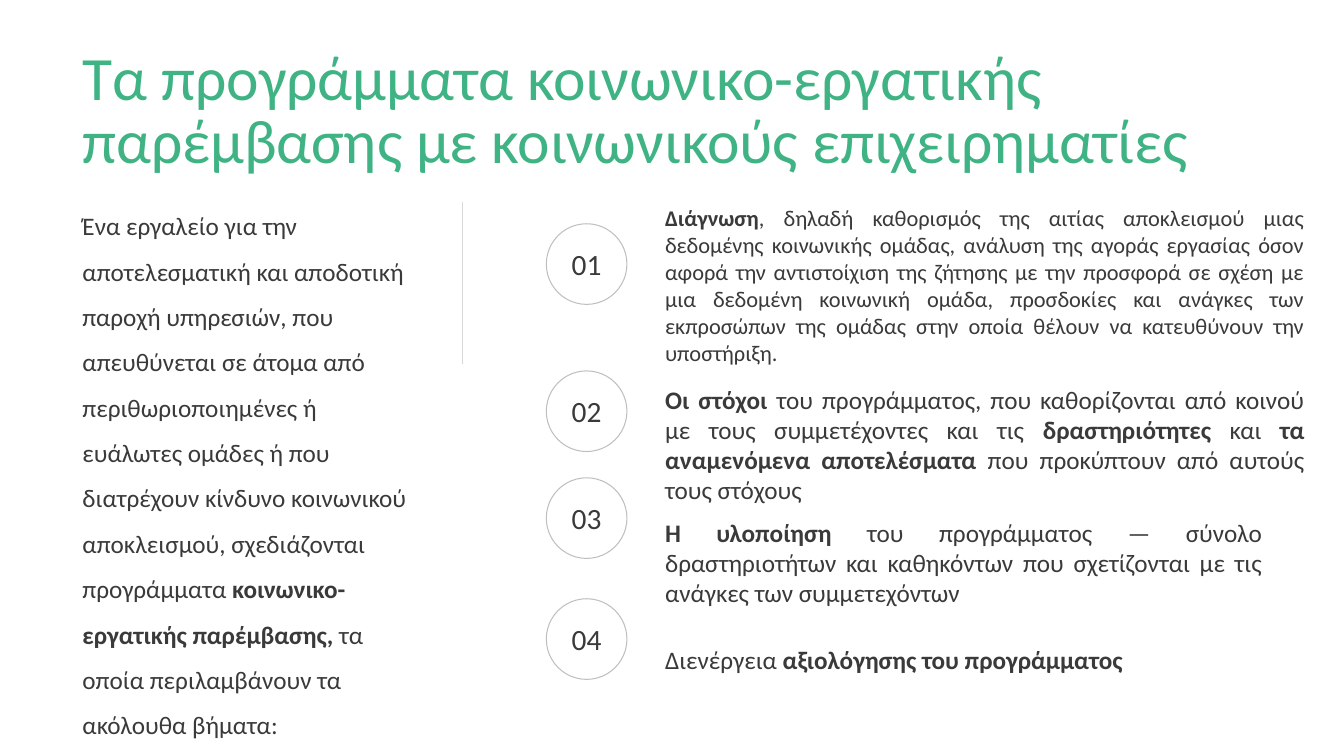
from lxml.etree import SubElement
from pptx import Presentation
from pptx.dml.color import RGBColor
from pptx.enum.shapes import MSO_CONNECTOR as Connector, MSO_SHAPE as Shape
from pptx.enum.text import MSO_ANCHOR as Anchor, MSO_AUTO_SIZE as AutoSize, PP_ALIGN as Align
from pptx.oxml.ns import qn
from pptx.util import Pt

GREEN = RGBColor(0x40, 0xB3, 0x85)
INK = RGBColor(0x3A, 0x3A, 0x3A)
RULE_GREY = RGBColor(0xD8, 0xD8, 0xD8)
RING_GREY = RGBColor(0xBF, 0xBF, 0xBF)

HEADING = "Τα προγράμματα κοινωνικο-εργατικής παρέμβασης με κοινωνικούς επιχειρηματίες"
INTRO = (
    "Ένα εργαλείο για την αποτελεσματική και αποδοτική παροχή υπηρεσιών, που απευθύνεται "
    "σε άτομα από περιθωριοποιημένες ή ευάλωτες ομάδες ή που διατρέχουν κίνδυνο κοινωνικού "
    "αποκλεισμού, σχεδιάζονται προγράμματα **κοινωνικο-εργατικής παρέμβασης,** τα οποία "
    "περιλαμβάνουν τα ακόλουθα βήματα:"
)
DIAGNOSIS = (
    "**Διάγνωση**, δηλαδή καθορισμός της αιτίας αποκλεισμού μιας δεδομένης κοινωνικής ομάδας, "
    "ανάλυση της αγοράς εργασίας όσον αφορά την αντιστοίχιση της ζήτησης με την προσφορά σε "
    "σχέση με μια δεδομένη κοινωνική ομάδα, προσδοκίες και ανάγκες των εκπροσώπων της ομάδας "
    "στην οποία θέλουν να κατευθύνουν την υποστήριξη."
)
GOALS = (
    "**Οι στόχοι **του προγράμματος, που καθορίζονται από κοινού με τους συμμετέχοντες και τις "
    "**δραστηριότητες **και **τα αναμενόμενα αποτελέσματα **που προκύπτουν από αυτούς τους στόχους"
)
DELIVERY = (
    "**Η υλοποίηση **του προγράμματος — σύνολο δραστηριοτήτων και καθηκόντων "
    "που σχετίζονται με τις ανάγκες των συμμετεχόντων"
)
EVALUATION = "Διενέργεια **αξιολόγησης του προγράμματος**"

STEPS = [
    (159.84, 142.56, 470.88, DIAGNOSIS, 16, Align.JUSTIFY, 1),
    (264.96, 270.72, 470.88, GOALS, 18, Align.JUSTIFY, 1),
    (341.28, 365.76, 440.64, DELIVERY, 18, Align.JUSTIFY, 1),
    (427.68, 445.68, 440.64, EVALUATION, 18, Align.LEFT, 1.5),
]


class Deck:
    """Hold the style and the current slide, and draw each kind of element."""

    def __init__(self, width, height, font="Calibri"):
        self.font = font
        self.presentation = Presentation()
        self.presentation.slide_width = Pt(width)
        self.presentation.slide_height = Pt(height)
        self.slide = None

    def add_slide(self):
        self.slide = self.presentation.slides.add_slide(self.presentation.slide_layouts[5])

    def fill_text(self, frame, text, size, color=INK, align=Align.LEFT, spacing=1.0,
                  anchor=Anchor.TOP):
        frame.word_wrap = True
        frame.auto_size = AutoSize.NONE
        frame.vertical_anchor = anchor
        paragraph = frame.paragraphs[0]
        paragraph.alignment = align
        paragraph.line_spacing = float(spacing)
        paragraph.font.name = self.font
        paragraph.font.size = Pt(size)
        paragraph.font.color.rgb = color
        for index, part in enumerate(text.split("**")):
            if part:
                run = paragraph.add_run()
                run.text = part
                if index % 2:
                    run.font.bold = True

    def title(self, text, left, top, width, height):
        heading = self.slide.shapes.title
        heading.left, heading.top = Pt(left), Pt(top)
        heading.width, heading.height = Pt(width), Pt(height)
        self.fill_text(heading.text_frame, text, 44, GREEN, spacing=0.85, anchor=Anchor.MIDDLE)

    def text(self, text, left, top, width, height, size=18, align=Align.LEFT, spacing=1.0):
        box = self.slide.shapes.add_textbox(Pt(left), Pt(top), Pt(width), Pt(height))
        self.fill_text(box.text_frame, text, size, align=align, spacing=spacing)

    def rule(self, x, top, bottom):
        divider = self.slide.shapes.add_connector(
            Connector.STRAIGHT, Pt(x), Pt(top), Pt(x), Pt(bottom))
        divider.line.color.rgb = RULE_GREY
        divider.line.width = Pt(1)
        SubElement(divider.element.spPr, qn("a:effectLst"))

    def badge(self, text, left, top, diameter=57.6):
        ring = self.slide.shapes.add_shape(
            Shape.OVAL, Pt(left), Pt(top), Pt(diameter), Pt(diameter))
        ring.shadow.inherit = False
        ring.fill.background()
        ring.line.color.rgb = RING_GREY
        ring.line.width = Pt(0.75)
        frame = ring.text_frame
        frame.margin_left = frame.margin_right = frame.margin_top = frame.margin_bottom = 0
        self.fill_text(frame, text, 21, align=Align.CENTER, anchor=Anchor.MIDDLE)


def main():
    deck = Deck(960, 540)
    deck.add_slide()
    deck.title(HEADING, 51.84, 39.6, 848.16, 82.08)
    deck.text(INTRO, 51.84, 136.08, 256.32, 372.24, spacing=1.5)
    deck.rule(330.48, 144, 259.92)
    for number, step in enumerate(STEPS, 1):
        badge_top, text_top, width, text, size, align, spacing = step
        deck.text(text, 468, text_top, width, 79.2, size, align, spacing)
        deck.badge(f"{number:02}", 390.24, badge_top)
    deck.presentation.save("out.pptx")


if __name__ == "__main__":
    main()
